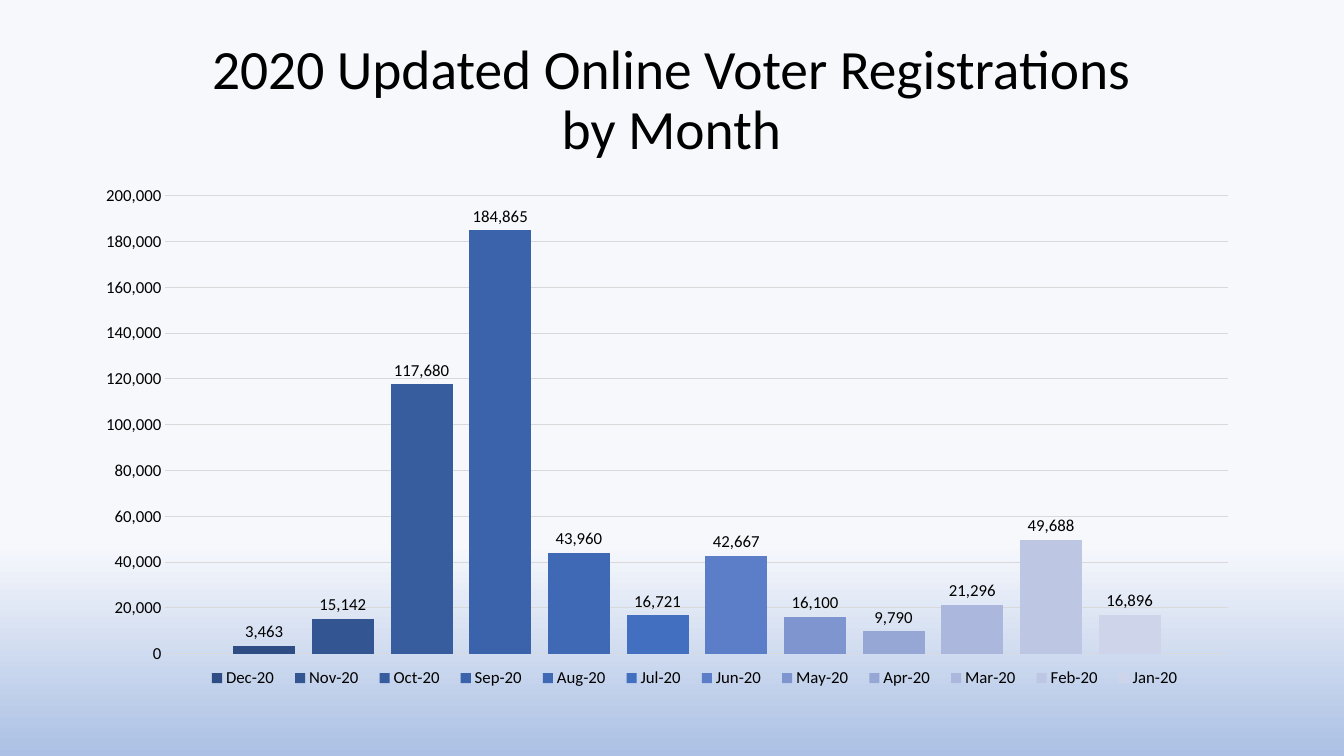
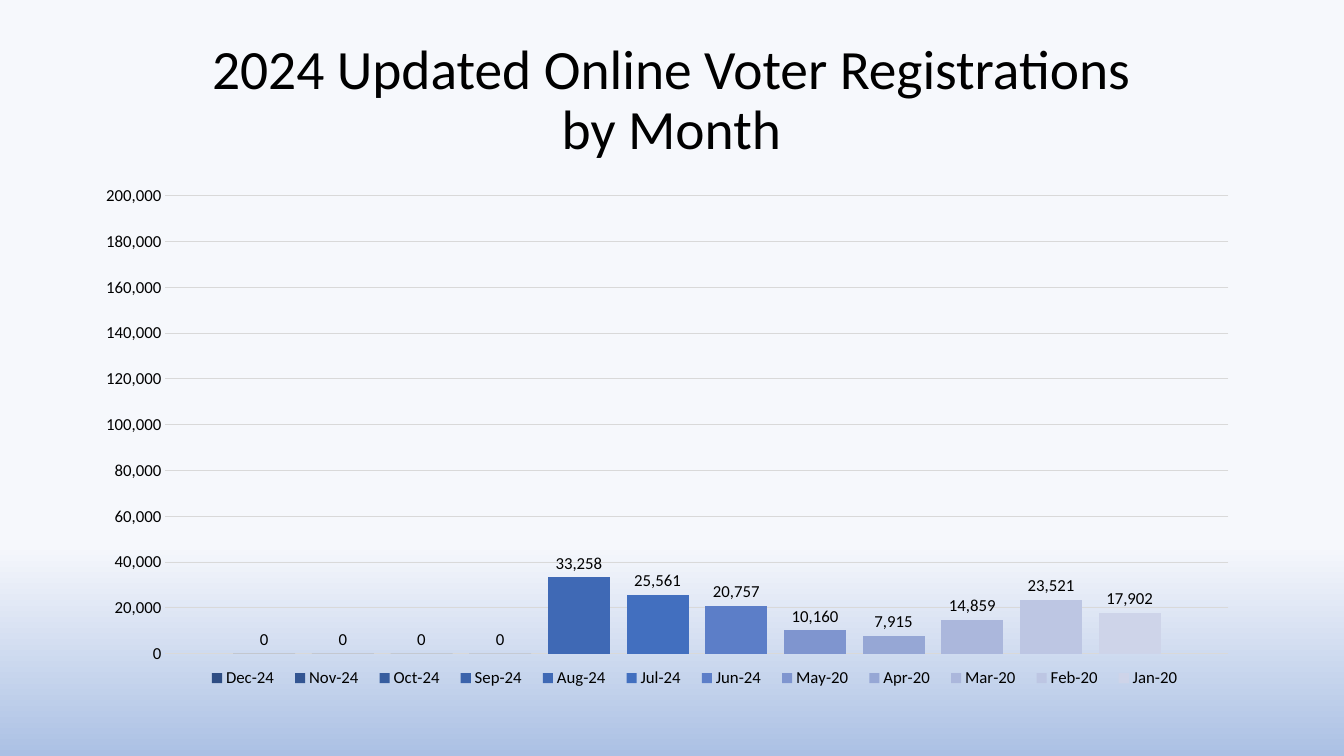
from dataclasses import dataclass

from lxml.etree import SubElement
from pptx import Presentation
from pptx.chart.data import CategoryChartData
from pptx.dml.color import RGBColor
from pptx.enum.chart import XL_CHART_TYPE as ChartType
from pptx.enum.chart import XL_LABEL_POSITION as LabelPosition
from pptx.enum.chart import XL_LEGEND_POSITION as LegendPosition
from pptx.enum.chart import XL_TICK_MARK as TickMark
from pptx.enum.text import MSO_ANCHOR as Anchor
from pptx.enum.text import PP_ALIGN as Align
from pptx.oxml.ns import qn
from pptx.util import Pt


@dataclass(frozen=True)
class Theme:
    font: str = "Calibri"
    title_size: float = 39.6
    chart_size: int = 10
    label_size: int = 12
    text: str = "000000"
    grid: str = "D9D9D9"
    background: tuple = ((0.72, "F6F8FC"), (1, "ABC0E4"))
    months: tuple = (
        ("Dec", "2E4D84"), ("Nov", "335592"), ("Oct", "375D9F"), ("Sep", "3B63AB"),
        ("Aug", "3F69B5"), ("Jul", "426FBF"), ("Jun", "5C7EC8"), ("May", "7F95CF"),
        ("Apr", "96A7D5"), ("Mar", "ABB7DC"), ("Feb", "BDC6E3"), ("Jan", "CED4E9"),
    )


def set_format(target, values):
    for name, value in values.items():
        setattr(target, name, value)


def set_font(font, size):
    set_format(font, {"name": theme.font, "size": Pt(size), "bold": False})
    font.color.rgb = RGBColor.from_string(theme.text)


theme = Theme()
PX = 9525
NUMBER = {"number_format": "#,##0", "number_format_is_linked": False}
TITLE_BOX = [length * PX for length in (88, 38, 1103, 117)]
CHART_BOX = [length * PX for length in (88, 154, 1103, 515)]
TITLE_FRAME = {"word_wrap": True, "vertical_anchor": Anchor.MIDDLE}
TITLE_PARAGRAPH = {"alignment": Align.CENTER, "line_spacing": 0.9}
PLOT = {"gap_width": 219, "overlap": -27, "vary_by_categories": False}
VALUE_AXIS = {
    "maximum_scale": 200000, "has_major_gridlines": True,
    "major_tick_mark": TickMark.NONE, "minor_tick_mark": TickMark.NONE,
}
CATEGORY_AXIS = {
    "visible": False,
    "major_tick_mark": TickMark.NONE, "minor_tick_mark": TickMark.NONE,
}
LEGEND = {"position": LegendPosition.BOTTOM, "include_in_layout": False}
LABELS = {"show_value": True, "position": LabelPosition.OUTSIDE_END, **NUMBER}
EDGES = {"xMode": "edge", "yMode": "edge"}
LAYOUTS = {
    "c:plotArea": {"layoutTarget": "inner", **EDGES, "x": 0.063, "y": 0.063, "w": 0.918, "h": 0.847},
    "c:legend": {**EDGES, "x": 0.09, "y": 0.925, "w": 0.86, "h": 0.06},
}

YEARS = (
    ("2020", ["20"] * 12,
     (3463, 15142, 117680, 184865, 43960, 16721, 42667, 16100, 9790, 21296, 49688, 16896)),
    ("2024", ["24"] * 7 + ["20"] * 5,
     (0, 0, 0, 0, 33258, 25561, 20757, 10160, 7915, 14859, 23521, 17902)),
)

presentation = Presentation()
set_format(presentation, {"slide_width": 1280 * PX, "slide_height": 720 * PX})

background = presentation.slide_master.background.fill
background.gradient()
background.gradient_angle = 270
for stop, (position, color) in zip(background.gradient_stops, theme.background):
    stop.position = position
    stop.color.rgb = RGBColor.from_string(color)

for year, suffixes, counts in YEARS:
    slide = presentation.slides.add_slide(presentation.slide_layouts[6])

    title = slide.shapes.add_textbox(*TITLE_BOX)
    set_format(title.text_frame, TITLE_FRAME)
    paragraph = title.text_frame.paragraphs[0]
    set_format(paragraph, TITLE_PARAGRAPH)
    first_line = paragraph.add_run()
    first_line.text = f"{year} Updated Online Voter Registrations"
    paragraph.add_line_break()
    second_line = paragraph.add_run()
    second_line.text = "by Month"
    for run in (first_line, second_line):
        set_font(run.font, theme.title_size)

    data = CategoryChartData(number_format="#,##0")
    data.categories = ["1"]
    for (month, color), suffix, count in zip(theme.months, suffixes, counts):
        data.add_series(f"{month}-{suffix}", [count])
    chart = slide.shapes.add_chart(ChartType.COLUMN_CLUSTERED, *CHART_BOX, data).chart
    set_format(chart, {"has_title": False, "has_legend": True})
    set_font(chart.font, theme.chart_size)
    set_format(chart.legend, LEGEND)
    set_font(chart.legend.font, theme.label_size)

    set_format(chart.category_axis, CATEGORY_AXIS)
    axis = chart.value_axis
    set_format(axis, VALUE_AXIS)
    set_format(axis.tick_labels, NUMBER)
    set_font(axis.tick_labels.font, theme.label_size)
    for hidden_line in (chart.category_axis, axis):
        hidden_line.format.line.fill.background()
    gridline = axis.major_gridlines.format.line
    gridline.width = Pt(0.75)
    gridline.color.rgb = RGBColor.from_string(theme.grid)

    plot = chart.plots[0]
    set_format(plot, PLOT)
    for series, (month, color) in zip(plot.series, theme.months):
        series.invert_if_negative = False
        series.format.fill.solid()
        series.format.fill.fore_color.rgb = RGBColor.from_string(color)
        set_format(series.data_labels, LABELS)
        set_font(series.data_labels.font, theme.label_size)

    for tag, values in LAYOUTS.items():
        area = chart.element.find(".//" + qn(tag))
        for layout in area.findall(qn("c:layout")):
            area.remove(layout)
        layout = SubElement(area, qn("c:layout"))
        area.insert(1 if tag == "c:legend" else 0, layout)
        manual = SubElement(layout, qn("c:manualLayout"))
        for name, value in values.items():
            SubElement(manual, qn(f"c:{name}")).set("val", str(value))

presentation.save("out.pptx")
